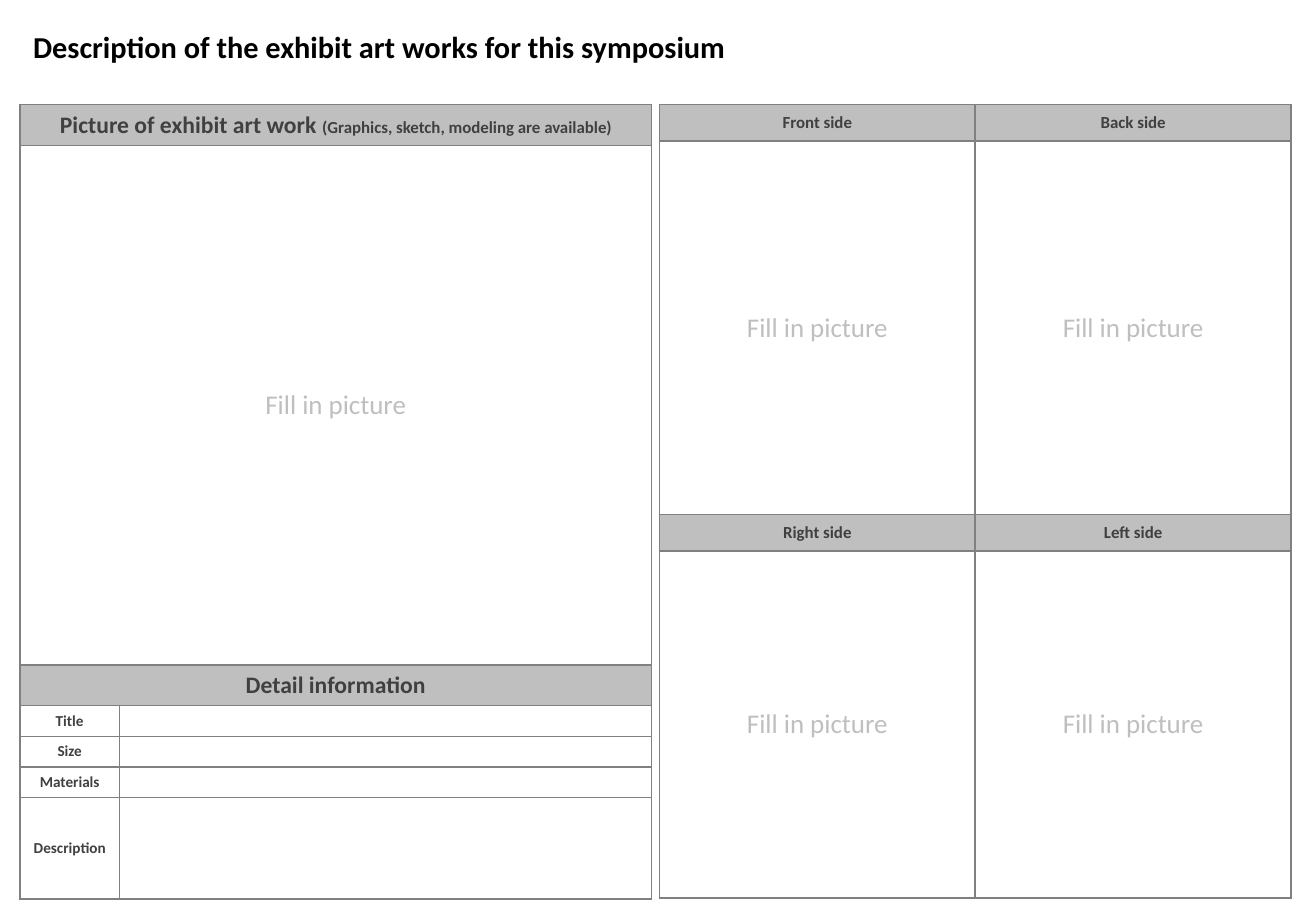
from lxml.etree import SubElement
from pptx import Presentation
from pptx.dml.color import RGBColor
from pptx.enum.text import MSO_ANCHOR, MSO_AUTO_SIZE, PP_ALIGN
from pptx.oxml.ns import qn
from pptx.util import Pt

BLACK = RGBColor(0x00, 0x00, 0x00)
WHITE = RGBColor(0xFF, 0xFF, 0xFF)
DARK = RGBColor(0x40, 0x40, 0x40)
SILVER = RGBColor(0xBF, 0xBF, 0xBF)
BORDER = RGBColor(0x80, 0x80, 0x80)
FONT = "Calibri"
HINT = "Fill in picture"
TABLE_TOP = 61.9


def set_font(font, size, color, bold):
    font.name = FONT
    font.size = Pt(size)
    font.bold = bold
    font.color.rgb = color


def add_grid(left, widths, heights, rows):
    """Each row is (fill, size, colour, bold, texts); one text spans the row."""
    table = s.shapes.add_table(len(heights), len(widths), Pt(left), Pt(TABLE_TOP),
                               Pt(sum(widths)), Pt(sum(heights))).table
    table.first_row = table.horz_banding = False
    for col, width in zip(table.columns, widths):
        col.width = Pt(width)
    for r, (fill, size, color, bold, texts) in enumerate(rows):
        table.rows[r].height = Pt(heights[r])
        for c in range(len(widths)):
            cell = table.cell(r, c)
            tc_pr = cell._tc.get_or_add_tcPr()
            for side in ("a:lnL", "a:lnR", "a:lnT", "a:lnB"):
                ln = SubElement(tc_pr, qn(side), w=str(Pt(1)))
                line_fill = SubElement(ln, qn("a:solidFill"))
                SubElement(line_fill, qn("a:srgbClr"), val=str(BORDER))
            cell.fill.solid()
            cell.fill.fore_color.rgb = fill
            cell.vertical_anchor = MSO_ANCHOR.MIDDLE
            p = cell.text_frame.paragraphs[0]
            if c < len(texts) and texts[c]:
                p.text = texts[c]
                p.alignment = PP_ALIGN.CENTER
                set_font(p.font, size, color, bold)
            else:
                # Small empty text keeps the row low
                p._p.get_or_add_endParaRPr().set("sz", str(size * 100))
        if len(texts) == 1:
            table.cell(r, 0).merge(table.cell(r, len(widths) - 1))
    return table


prs = Presentation()
prs.slide_width, prs.slide_height = Pt(780), Pt(540)
s = prs.slides.add_slide(prs.slide_layouts[5])

# Title
title = s.shapes.title
title.left, title.top, title.width, title.height = Pt(12.4), Pt(13.1), Pt(428.4), Pt(29)
tf = title.text_frame
tf.text = "Description of the exhibit art works for this symposium"
tf.word_wrap = False
tf.auto_size = MSO_AUTO_SIZE.NONE
tf.vertical_anchor = MSO_ANCHOR.TOP
p = tf.paragraphs[0]
p.alignment = PP_ALIGN.LEFT
set_font(p.font, 18, BLACK, True)

# Art work and its details
picture_row = (WHITE, 16, SILVER, False)
details = [(WHITE, 9, DARK, True, [label, ""])
           for label in ("Title", "Size", "Materials", "Description")]
art_work = add_grid(11.8, [59, 315.4], [24.2, 307.9, 24.2, 18, 18, 18, 60], [
    (SILVER, 14, DARK, True, ["Picture of exhibit art work "]),
    (*picture_row, [HINT]),
    (SILVER, 14, DARK, True, ["Detail information"]),
    *details,
])
note = art_work.cell(0, 0).text_frame.paragraphs[0].add_run()
note.text = "(Graphics, sketch, modeling are available)"
note.font.size = Pt(10)

# Four side views
side_row = (SILVER, 10, DARK, True)
add_grid(390.8, [187.2, 187.2], [21.6, 221.6, 21.6, 205.5], [
    (*side_row, ["Front side", "Back side"]),
    (*picture_row, [HINT, HINT]),
    (*side_row, ["Right side", "Left side"]),
    (*picture_row, [HINT, HINT]),
])

prs.save("out.pptx")
